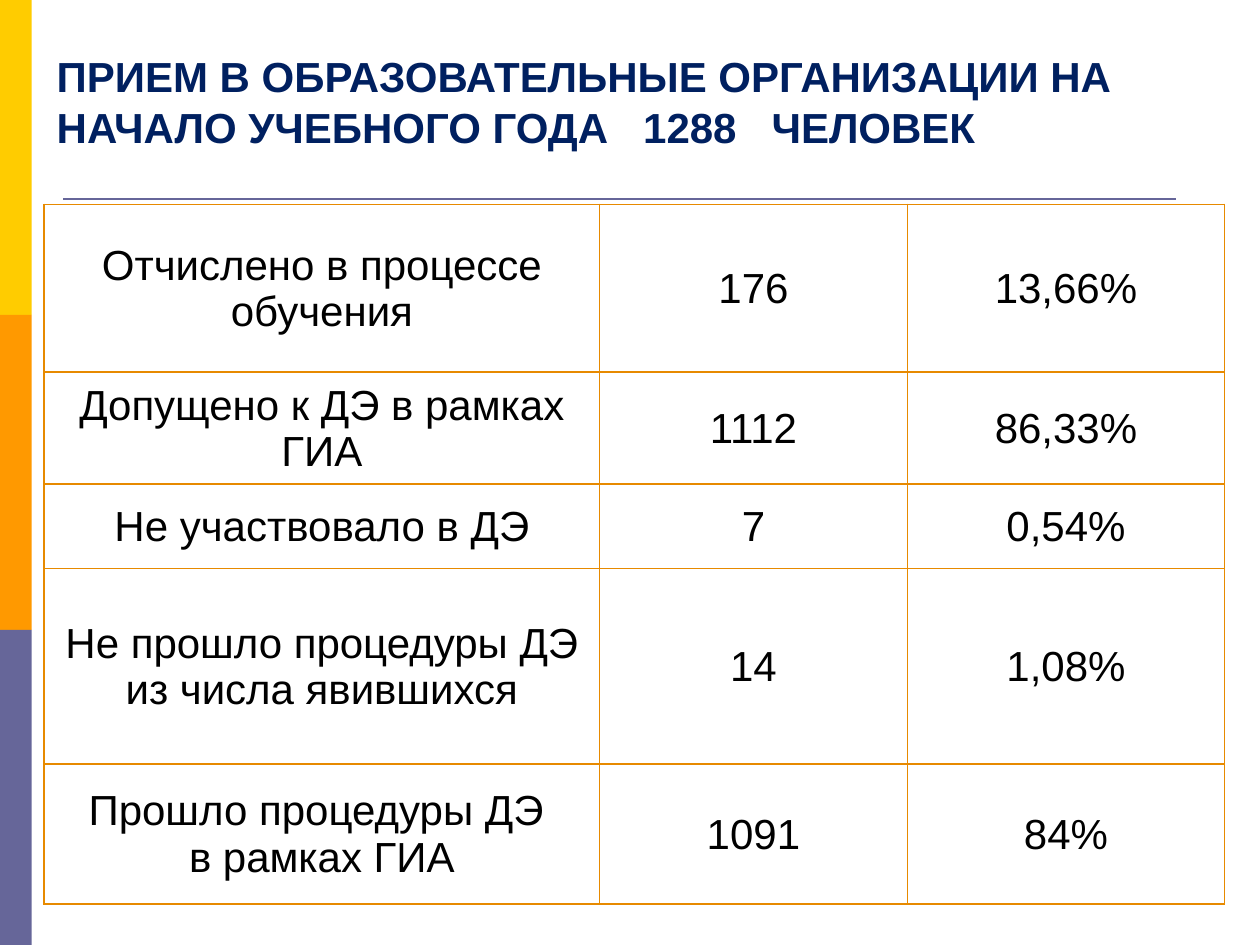
from lxml.etree import SubElement
from pptx import Presentation
from pptx.dml.color import RGBColor
from pptx.enum.shapes import MSO_CONNECTOR, MSO_SHAPE
from pptx.enum.text import MSO_ANCHOR, PP_ALIGN
from pptx.oxml.ns import qn
from pptx.util import Cm, Pt

TITLE = "ПРИЕМ В ОБРАЗОВАТЕЛЬНЫЕ ОРГАНИЗАЦИИ НА НАЧАЛО УЧЕБНОГО ГОДА   1288   ЧЕЛОВЕК"
ROWS = [
    ("Отчислено в процессе обучения", "176", "13,66%"),
    ("Допущено к ДЭ в рамках ГИА", "1112", "86,33%"),
    ("Не участвовало в ДЭ", "7", "0,54%"),
    ("Не прошло процедуры ДЭ из числа явившихся", "14", "1,08%"),
    ("Прошло процедуры ДЭ \nв рамках ГИА", "1091", "84%"),
]
COL_WIDTHS = [11.2, 6.2, 6.4]
ROW_HEIGHTS = [3.38, 2.26, 1.7, 3.94, 2.82]
LEFT, TITLE_TOP, TABLE_TOP = 0.89, 0.43, 4.12
TITLE_HEIGHT, BAND_WIDTH = 2.75, 0.64

THEME = {
    "bands": ["FFCC00", "FF9900", "666699"],
    "rule": "666699",
    "border": "E78A00",
    "title": {"name": "Arial", "size": Pt(24), "bold": True},
    "title_color": "002060",
    "cell": {"name": "Arial", "size": Pt(24), "bold": False},
    "cell_color": "000000",
}
CELL_FORMAT = {
    "vertical_anchor": MSO_ANCHOR.MIDDLE,
    "margin_left": Cm(0.03),
    "margin_right": Cm(0.03),
    "margin_top": Cm(0.03),
    "margin_bottom": Cm(0),
}


def set_attrs(obj, values):
    for name, value in values.items():
        setattr(obj, name, value)


def set_font(font, values, color):
    set_attrs(font, values)
    font.color.rgb = RGBColor.from_string(color)


def add_borders(cell):
    tcPr = cell._tc.get_or_add_tcPr()
    for i, side in enumerate(("lnL", "lnR", "lnT", "lnB")):
        ln = tcPr.makeelement(qn(f"a:{side}"), {"w": str(Pt(1))})
        fill = SubElement(ln, qn("a:solidFill"))
        SubElement(fill, qn("a:srgbClr"), val=THEME["border"])
        tcPr.insert(i, ln)


def add_bands(s, height):
    step = height // len(THEME["bands"])
    for i, color in enumerate(THEME["bands"]):
        sp = s.shapes.add_shape(MSO_SHAPE.RECTANGLE, 0, i * step, Cm(BAND_WIDTH), step)
        sp.shadow.inherit = False
        sp.fill.solid()
        sp.fill.fore_color.rgb = RGBColor.from_string(color)
        sp.line.fill.background()


def add_rule(s):
    line = s.shapes.add_connector(MSO_CONNECTOR.STRAIGHT, Cm(1.27), Cm(4.01), Cm(23.7), Cm(4.01))
    line.line.color.rgb = RGBColor.from_string(THEME["rule"])
    line.line.width = Pt(1.5)
    SubElement(line._element.spPr, qn("a:effectLst"))


def format_title(s):
    sp = s.shapes.title
    set_attrs(sp, {"left": Cm(LEFT), "top": Cm(TITLE_TOP),
                   "width": Cm(sum(COL_WIDTHS)), "height": Cm(TITLE_HEIGHT)})
    tf = sp.text_frame
    set_attrs(tf, {"text": TITLE, "word_wrap": True, "vertical_anchor": MSO_ANCHOR.BOTTOM})
    p = tf.paragraphs[0]
    p.alignment = PP_ALIGN.LEFT
    set_font(p.runs[0].font, THEME["title"], THEME["title_color"])


def add_results(s):
    table = s.shapes.add_table(len(ROWS), len(COL_WIDTHS), Cm(LEFT), Cm(TABLE_TOP),
                               Cm(sum(COL_WIDTHS)), Cm(sum(ROW_HEIGHTS))).table
    set_attrs(table, {"first_row": False, "horz_banding": False})
    for col, width in zip(table.columns, COL_WIDTHS):
        col.width = Cm(width)
    for row, height, texts in zip(table.rows, ROW_HEIGHTS, ROWS):
        row.height = Cm(height)
        for cell, text in zip(row.cells, texts):
            cell.text = text
            set_attrs(cell, CELL_FORMAT)
            cell.fill.background()
            add_borders(cell)
            for p in cell.text_frame.paragraphs:
                p.alignment = PP_ALIGN.CENTER
                set_font(p.runs[0].font, THEME["cell"], THEME["cell_color"])


def main():
    prs = Presentation()
    set_attrs(prs, {"slide_width": Cm(25.4), "slide_height": Cm(19.05)})
    s = prs.slides.add_slide(prs.slide_layouts[5])
    add_bands(s, prs.slide_height)
    add_rule(s)
    format_title(s)
    add_results(s)
    prs.save("out.pptx")


if __name__ == "__main__":
    main()
